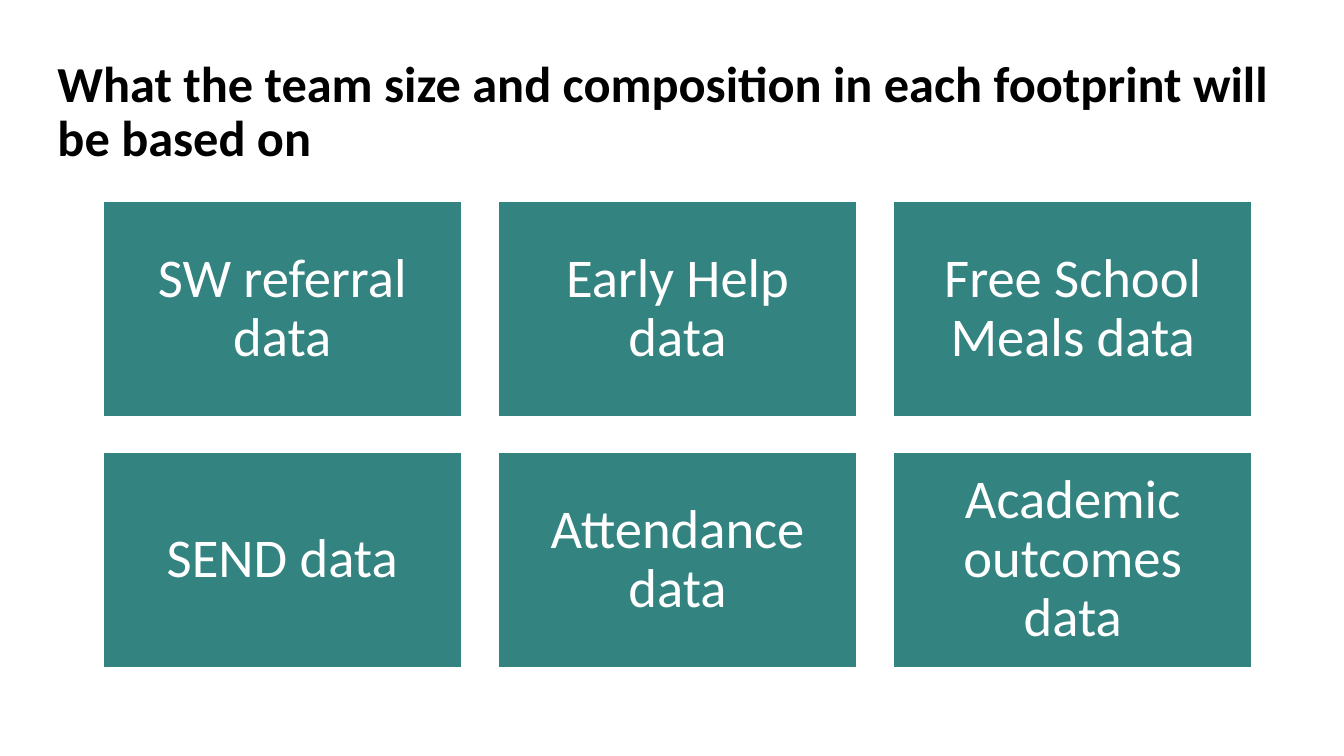
from pptx import Presentation
from pptx.dml.color import RGBColor
from pptx.enum.shapes import MSO_SHAPE
from pptx.enum.text import MSO_ANCHOR, MSO_AUTO_SIZE, PP_ALIGN
from pptx.util import Inches, Pt

RECTANGLE = MSO_SHAPE.RECTANGLE
MIDDLE = MSO_ANCHOR.MIDDLE
NO_AUTOFIT = MSO_AUTO_SIZE.NONE
LEFT, CENTER = PP_ALIGN.LEFT, PP_ALIGN.CENTER

COLORS = {"teal": "338381", "white": "FFFFFF", "black": "000000"}
TITLE = "What the team size and composition in each footprint will be based on"
DATA_SOURCES = [
    "SW referral data", "Early Help data", "Free School Meals data",
    "SEND data", "Attendance data", "Academic outcomes data",
]
COLUMNS = 3
GRID_LEFT, GRID_TOP = 1.02, 2
CARD_WIDTH, CARD_HEIGHT = 3.56, 2.13
GAP = 0.36


def color(name):
    return RGBColor.from_string(COLORS[name])


def write_text(frame, text, *, size, fill, bold=False, align=LEFT, inset=None):
    frame.word_wrap = True
    frame.auto_size = NO_AUTOFIT
    frame.vertical_anchor = MIDDLE
    if inset is not None:
        frame.margin_left = frame.margin_right = Inches(inset)
        frame.margin_top = frame.margin_bottom = Inches(inset)
    para = frame.paragraphs[0]
    para.alignment = align
    para.line_spacing = 0.9
    span = para.add_run()
    span.text = text
    span.font.name = "Calibri"
    span.font.size = Pt(size)
    span.font.bold = bold
    span.font.color.rgb = color(fill)


class Page:
    """Holds the current slide and its shared element styles."""

    def __init__(self, deck):
        self.slide = deck.slides.add_slide(deck.slide_layouts[5])

    def title(self, text, left, top, width, height):
        box = self.slide.shapes.title
        box.left, box.top = Inches(left), Inches(top)
        box.width, box.height = Inches(width), Inches(height)
        write_text(box.text_frame, text, size=36, fill="black", bold=True)

    def card(self, text, left, top):
        box = self.slide.shapes.add_shape(
            RECTANGLE, Inches(left), Inches(top),
            Inches(CARD_WIDTH), Inches(CARD_HEIGHT))
        box.shadow.inherit = False
        box.fill.solid()
        box.fill.fore_color.rgb = color("teal")
        box.line.color.rgb = color("white")
        box.line.width = Pt(1)
        write_text(box.text_frame, text, size=39, fill="white",
                   align=CENTER, inset=0.16)


def main():
    deck = Presentation()
    deck.slide_width, deck.slide_height = Inches(13.33), Inches(7.5)
    page = Page(deck)
    page.title(TITLE, 0.47, 0.4, 12.49, 1.45)
    for index, source in enumerate(DATA_SOURCES):
        row, column = divmod(index, COLUMNS)
        page.card(source, GRID_LEFT + column * (CARD_WIDTH + GAP),
                  GRID_TOP + row * (CARD_HEIGHT + GAP))
    deck.save("out.pptx")


if __name__ == "__main__":
    main()
